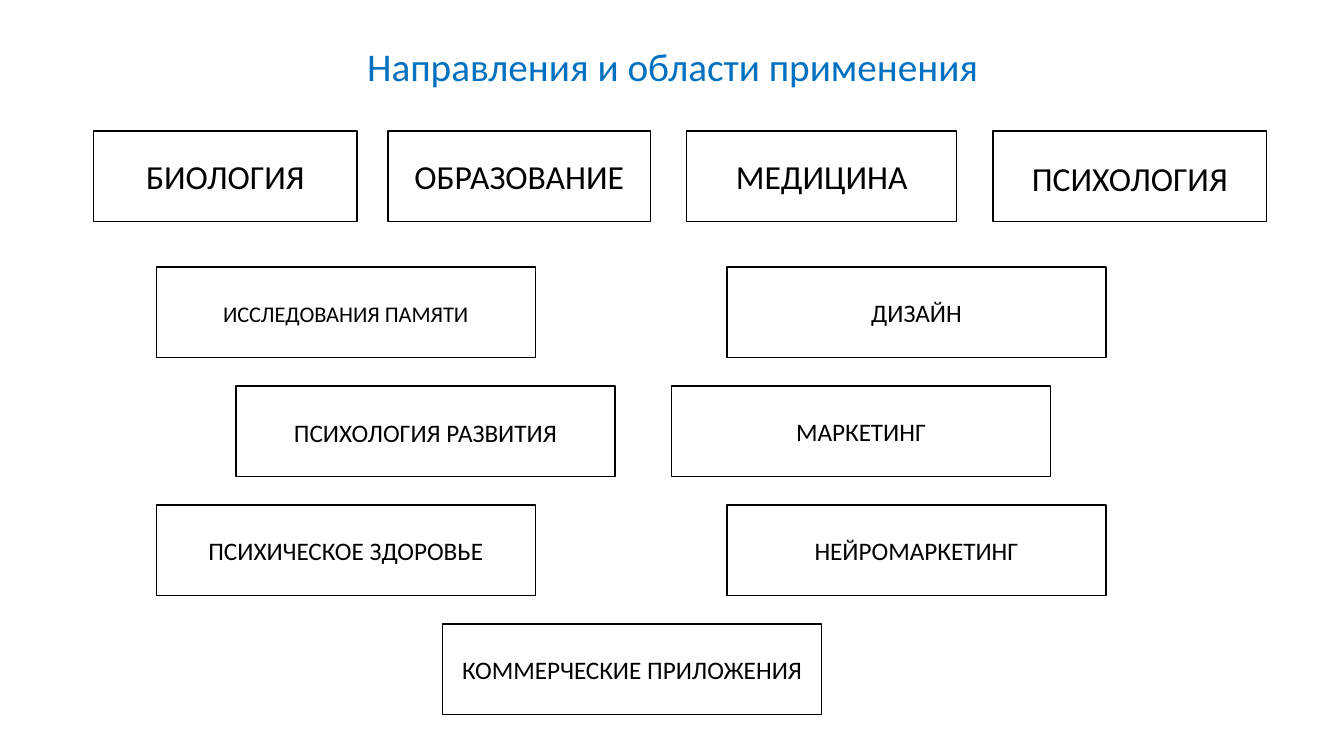
"""Build the slide of directions and areas of application."""
from pptx import Presentation
from pptx.dml.color import RGBColor
from pptx.enum.shapes import MSO_SHAPE
from pptx.enum.text import MSO_ANCHOR, MSO_AUTO_SIZE, PP_ALIGN
from pptx.util import Inches, Pt

BLUE = RGBColor(0x00, 0x70, 0xC0)
BLACK = RGBColor(0x00, 0x00, 0x00)
WHITE = RGBColor(0xFF, 0xFF, 0xFF)
RECT = MSO_SHAPE.RECTANGLE
CENTER = PP_ALIGN.CENTER
TOP, MIDDLE = MSO_ANCHOR.TOP, MSO_ANCHOR.MIDDLE
NO_FIT = MSO_AUTO_SIZE.NONE

FONT = "Calibri"
BOX_H = 0.9
FIELD_TOP = 1.3
AREA_W, AREA_TOP, AREA_STEP = 3.76, 2.65, 1.18

FIELDS = [
    ("БИОЛОГИЯ", 0.93, 2.61, 1),
    ("ОБРАЗОВАНИЕ", 3.85, 2.6, 1),
    ("МЕДИЦИНА", 6.81, 2.68, 1),
    ("ПСИХОЛОГИЯ", 9.85, 2.71, 1.07),
]
AREAS = [
    ("ИССЛЕДОВАНИЯ ПАМЯТИ", 0, 1.55, 16, 1.07),
    ("ДИЗАЙН", 0, 7.21, 18, 1),
    ("ПСИХОЛОГИЯ РАЗВИТИЯ", 1, 2.34, 18, 1.07),
    ("МАРКЕТИНГ", 1, 6.66, 18, 1),
    ("ПСИХИЧЕСКОЕ ЗДОРОВЬЕ", 2, 1.55, 18, 1),
    ("НЕЙРОМАРКЕТИНГ", 2, 7.21, 18, 1),
    ("КОММЕРЧЕСКИЕ ПРИЛОЖЕНИЯ", 3, 4.39, 18, 1),
]


def write(sp, text, size, color, anchor):
    tf = sp.text_frame
    tf.text = text
    tf.word_wrap = True
    tf.auto_size = NO_FIT
    tf.vertical_anchor = anchor
    p = tf.paragraphs[0]
    p.alignment = CENTER
    font = p.runs[0].font
    font.name, font.size, font.color.rgb = FONT, Pt(size), color
    return p


def add_box(text, left, top, width, size, spacing):
    sp = s.shapes.add_shape(RECT, Inches(left), Inches(top), Inches(width), Inches(BOX_H))
    sp.shadow.inherit = False
    sp.fill.solid()
    sp.fill.fore_color.rgb = WHITE
    sp.line.color.rgb = BLACK
    sp.line.width = Pt(1)
    p = write(sp, text, size, BLACK, MIDDLE)
    p.line_spacing = spacing
    p.space_after = Pt(8)


prs = Presentation()
prs.slide_width, prs.slide_height = Inches(13.33), Inches(7.5)
s = prs.slides.add_slide(prs.slide_layouts[5])

title = s.shapes.title
title.left, title.top = Inches(0.6), Inches(0.37)
title.width, title.height = Inches(12.14), Inches(0.57)
write(title, "Направления и области применения", 28, BLUE, TOP)

for text, left, width, spacing in FIELDS:
    add_box(text, left, FIELD_TOP, width, 24, spacing)

for text, row, left, size, spacing in AREAS:
    add_box(text, left, AREA_TOP + row * AREA_STEP, AREA_W, size, spacing)

prs.save("out.pptx")
